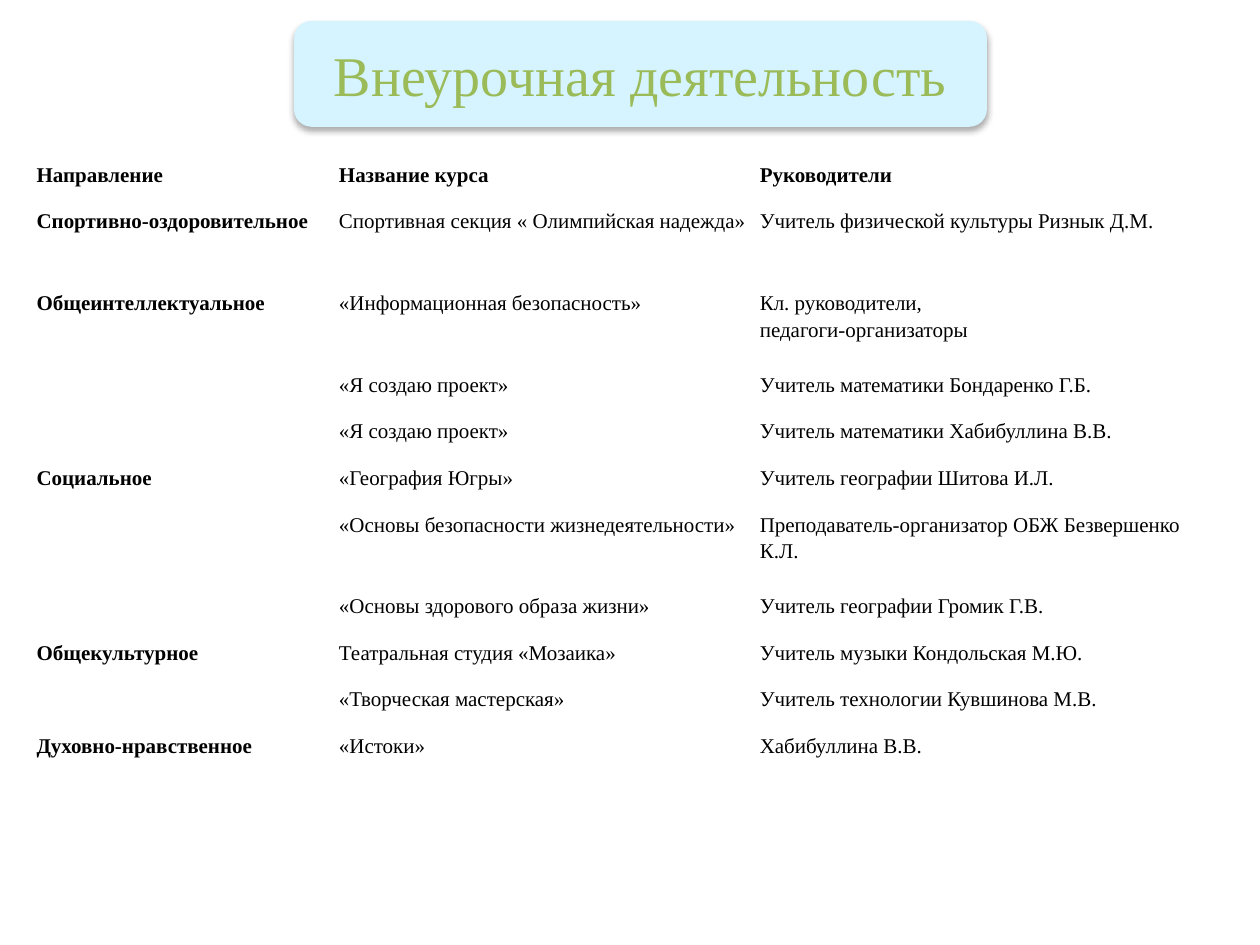
from lxml import etree
from pptx import Presentation
from pptx.dml.color import RGBColor
from pptx.enum.shapes import MSO_SHAPE
from pptx.enum.text import MSO_ANCHOR, PP_ALIGN
from pptx.oxml.ns import qn
from pptx.util import Pt

ROUNDED = MSO_SHAPE.ROUNDED_RECTANGLE
MIDDLE = MSO_ANCHOR.MIDDLE
CENTER = PP_ALIGN.CENTER

WHITE = RGBColor(0xFF, 0xFF, 0xFF)
BLACK = RGBColor(0x00, 0x00, 0x00)
PALE_BLUE = RGBColor(0xD5, 0xF4, 0xFF)
GREEN = RGBColor(0x9B, 0xBB, 0x59)
FONT = "Times New Roman"
BODY_SIZE = 12
EMU_PER_PT = 12700

COLUMN_WIDTHS = [172.8, 240.5, 270.7]
LINE_ROW, TALL_ROW, LAST_ROW = 26.6, 46.8, 66.2
TALL_ROWS = {1, 2, 6}
MERGED_DIRECTIONS = [(2, 3), (8, 9)]  # first and last row of each merge

COURSES = [
    ("Направление", "Название курса", "Руководители"),
    ("Спортивно-оздоровительное", "Спортивная секция « Олимпийская надежда»",
     "Учитель физической культуры Ризнык Д.М."),
    ("Общеинтеллектуальное", "«Информационная безопасность»",
     "Кл. руководители,\nпедагоги-организаторы"),
    ("", "«Я создаю проект»", "Учитель математики Бондаренко Г.Б."),
    ("", "«Я создаю проект»", "Учитель математики Хабибуллина В.В."),
    ("Социальное", "«География Югры»", "Учитель географии Шитова И.Л."),
    ("", "«Основы безопасности жизнедеятельности»",
     "Преподаватель-организатор ОБЖ Безвершенко К.Л."),
    ("", "«Основы здорового образа жизни»", "Учитель географии Громик Г.В."),
    ("Общекультурное", "Театральная студия «Мозаика»",
     "Учитель музыки Кондольская М.Ю."),
    ("", "«Творческая мастерская»", "Учитель технологии Кувшинова М.В."),
    ("Духовно-нравственное", "«Истоки»", "Хабибуллина В.В."),
]


def add_run(paragraph, text, size, color, bold=False):
    run = paragraph.add_run()
    run.text = text
    run.font.name = FONT
    run.font.size = Pt(size)
    run.font.bold = bold
    run.font.color.rgb = color


def add_soft_shadow(shape, blur, distance, opacity):
    """Black shadow falling straight down; lengths in points."""
    shape.shadow.inherit = False
    effects = shape._element.spPr.find(qn("a:effectLst"))
    shadow = etree.SubElement(
        effects, qn("a:outerShdw"), blurRad=str(int(blur * EMU_PER_PT)),
        dist=str(int(distance * EMU_PER_PT)), dir="5400000", rotWithShape="0")
    color = etree.SubElement(shadow, qn("a:srgbClr"), val=str(BLACK))
    etree.SubElement(color, qn("a:alpha"), val=str(opacity * 1000))


def add_title(slide, left, top, width, height):
    banner = slide.shapes.add_shape(
        ROUNDED, Pt(left), Pt(top), Pt(width), Pt(height))
    banner.fill.solid()
    banner.fill.fore_color.rgb = PALE_BLUE
    banner.line.fill.background()
    add_soft_shadow(banner, blur=3.5, distance=2.2, opacity=32)
    frame = banner.text_frame
    frame.word_wrap = True
    frame.vertical_anchor = MIDDLE
    paragraph = frame.paragraphs[0]
    paragraph.alignment = CENTER
    add_run(paragraph, "Внеурочная деятельность", 32, GREEN)


def fill_cell(cell, text, bold):
    cell.fill.solid()
    cell.fill.fore_color.rgb = WHITE
    cell.margin_left = cell.margin_right = Pt(2.9)
    cell.margin_top = cell.margin_bottom = Pt(2.9)
    frame = cell.text_frame
    for index, line in enumerate(text.split("\n")):
        paragraph = frame.paragraphs[0] if index == 0 else frame.add_paragraph()
        paragraph.line_spacing = 1.15
        if line:
            add_run(paragraph, line, BODY_SIZE, BLACK, bold)
        else:
            # Keeps an empty cell from stretching its row
            etree.SubElement(paragraph._p, qn("a:endParaRPr"),
                             sz=str(BODY_SIZE * 100))


def add_courses(slide, left, top, width, height):
    table = slide.shapes.add_table(
        len(COURSES), len(COLUMN_WIDTHS),
        Pt(left), Pt(top), Pt(width), Pt(height)).table
    table.horz_banding = False
    for column, column_width in zip(table.columns, COLUMN_WIDTHS):
        column.width = Pt(column_width)
    for index, row in enumerate(table.rows):
        row.height = Pt(TALL_ROW if index in TALL_ROWS else LINE_ROW)
    table.rows[len(COURSES) - 1].height = Pt(LAST_ROW)

    # Header row and direction column are bold
    for r, course in enumerate(COURSES):
        for c, text in enumerate(course):
            fill_cell(table.cell(r, c), text, bold=r == 0 or c == 0)
    for first, last in MERGED_DIRECTIONS:
        table.cell(first, 0).merge(table.cell(last, 0))


def main():
    presentation = Presentation()
    presentation.slide_width = Pt(720)
    presentation.slide_height = Pt(540)
    slide = presentation.slides.add_slide(presentation.slide_layouts[6])
    add_title(slide, 168, 12, 396, 60.5)
    add_courses(slide, 18, 88.5, 684, 392)
    presentation.save("out.pptx")


if __name__ == "__main__":
    main()
